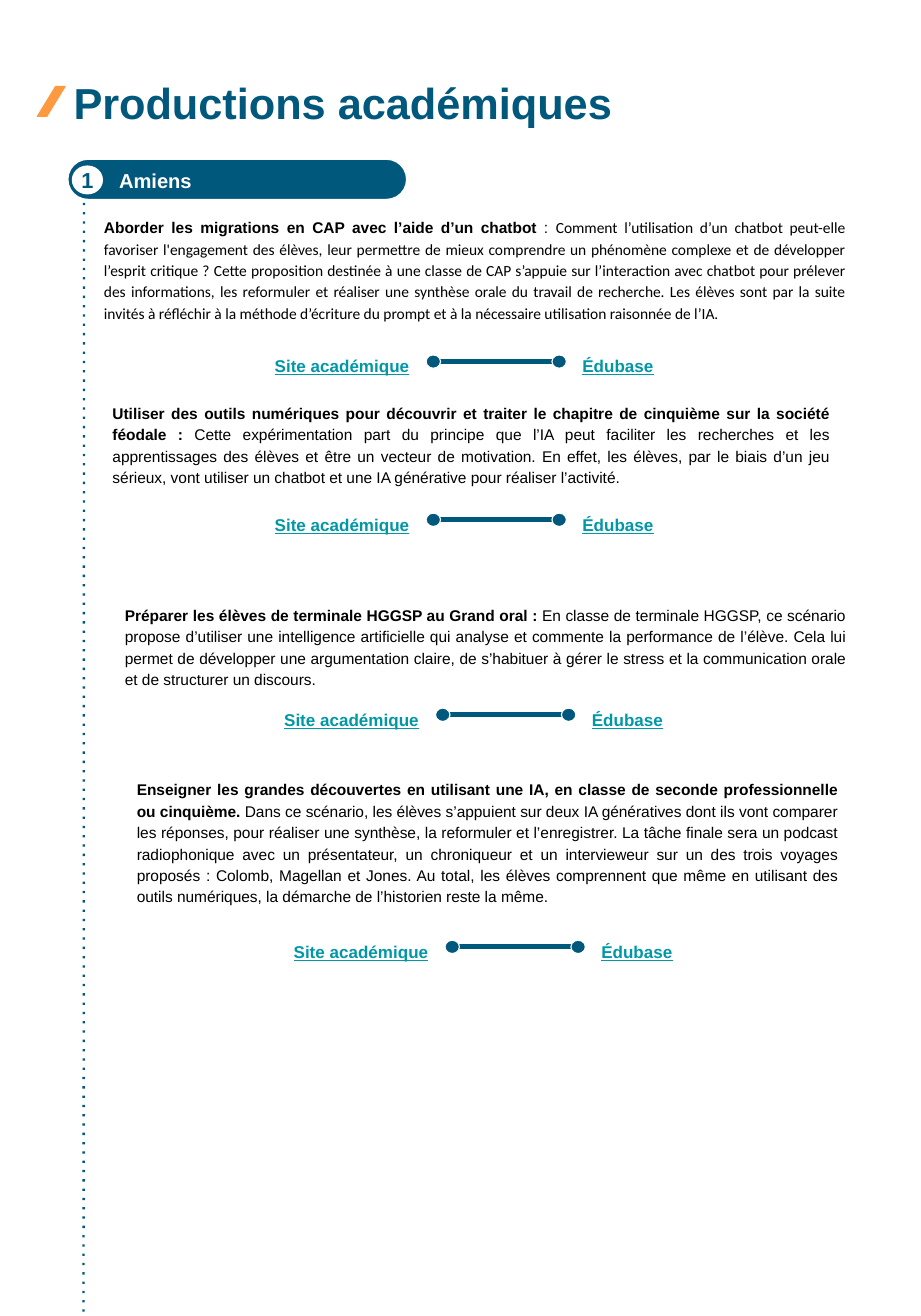
from lxml import etree
from pptx import Presentation
from pptx import util as u
from pptx.dml import color
from pptx.enum import shapes, text
from pptx.oxml import ns

TITLE = "Productions académiques"
ACADEMY = ("1", "Amiens")
LINK_LABELS = ("Site académique", "Édubase")

# Text boxes are (left, top, width, height) in grid cells; links are (left, top).
PROJECTS = [
    {
        "box": (8.35, 18.35, 68.5, 13.1), "links": (19.95, 30.95), "body_font": "Calibri",
        "heading": "Aborder les migrations en CAP avec l’aide d’un chatbot",
        "joint": " : ",
        "body": "Comment l’utilisation d’un chatbot peut-elle favoriser l'engagement des élèves, "
                "leur permettre de mieux comprendre un phénomène complexe et de développer l’esprit "
                "critique ? Cette proposition destinée à une classe de CAP s’appuie sur l’interaction "
                "avec chatbot pour prélever des informations, les reformuler et réaliser une synthèse "
                "orale du travail de recherche. Les élèves sont par la suite invités à réfléchir à la "
                "méthode d’écriture du prompt et à la nécessaire utilisation raisonnée de l’IA.",
    },
    {
        "box": (9.12, 35, 66.3, 9.5), "links": (19.95, 45.15), "body_font": "Arial",
        "heading": "Utiliser des outils numériques pour découvrir et traiter le chapitre de "
                   "cinquième sur la société féodale :",
        "joint": " ",
        "body": "Cette expérimentation part du principe que l’IA peut faciliter les recherches et les "
                "apprentissages des élèves et être un vecteur de motivation. En effet, les élèves, par "
                "le biais d’un jeu sérieux, vont utiliser un chatbot et une IA générative pour réaliser "
                "l’activité.",
    },
    {
        "box": (10.22, 53.15, 66.65, 6.7), "links": (20.8, 62.65), "body_font": "Arial",
        "heading": "Préparer les élèves de terminale HGGSP au Grand oral :",
        "joint": " ",
        "body": "En classe de terminale HGGSP, ce scénario propose d’utiliser une intelligence "
                "artificielle qui analyse et commente la performance de l’élève. Cela lui permet de "
                "développer une argumentation claire, de s’habituer à gérer le stress et la "
                "communication orale et de structurer un discours.",
    },
    {
        "box": (11.3, 68.8, 64.85, 8.8), "links": (21.65, 83.48), "body_font": "Arial",
        "heading": "Enseigner les grandes découvertes en utilisant une IA, en classe de seconde "
                   "professionnelle ou cinquième.",
        "joint": " ",
        "body": "Dans ce scénario, les élèves s’appuient sur deux IA génératives dont ils vont comparer "
                "les réponses, pour réaliser une synthèse, la reformuler et l’enregistrer. La tâche "
                "finale sera un podcast radiophonique avec un présentateur, un chroniqueur et un "
                "intervieweur sur un des trois voyages proposés : Colomb, Magellan et Jones. Au total, "
                "les élèves comprennent que même en utilisant des outils numériques, la démarche de "
                "l’historien reste la même.",
    },
]

THEME = {
    "navy": "00587D", "orange": "FF9940", "teal": "0097A7", "white": "FFFFFF", "black": "000000",
    "font": "Arial", "title": 28, "number": 14, "academy": 13, "link": 11, "body": 10,
}
CELL = 0.1
PAGE_WIDTH = u.Cm(21)
PAGE_HEIGHT = u.Cm(30)
INSET = 1
ALIGN = text.PP_ALIGN
ANCHOR = text.MSO_ANCHOR
KIND = shapes.MSO_SHAPE


def cells(*counts):
    return [u.Inches(count * CELL) for count in counts]


def rgb(name):
    return color.RGBColor.from_string(THEME[name])


def set_frame(shape, insets, anchor=ANCHOR.TOP):
    sides = ("margin_left", "margin_top", "margin_right", "margin_bottom")
    values = dict(zip(sides, cells(*insets)), word_wrap=True,
                  auto_size=text.MSO_AUTO_SIZE.NONE, vertical_anchor=anchor)
    for name, value in values.items():
        setattr(shape.text_frame, name, value)


def write(shape, content, size, ink, align=ALIGN.LEFT, **style):
    """Add a run to the first paragraph of the shape."""
    para = shape.text_frame.paragraphs[0]
    para.alignment = align
    span = para.add_run()
    span.text = content
    span.font.color.rgb = rgb(ink)
    values = {"name": THEME["font"], "size": u.Pt(THEME[size]), "bold": True} | style
    for name, value in values.items():
        setattr(span.font, name, value)
    return para


def add_box(page, at):
    box = page.shapes.add_textbox(*cells(*at))
    set_frame(box, [INSET] * 4)
    return box


def add_shape(page, kind, at, fill, line, adjust=None):
    shape = page.shapes.add_shape(kind, *cells(*at))
    shape.shadow.inherit = False
    shape.fill.solid()
    shape.fill.fore_color.rgb = rgb(fill)
    shape.line.color.rgb = rgb(line)
    shape.line.width = u.Pt(0.75)
    if adjust is not None:
        shape.adjustments[0] = adjust
    return shape


def add_line(page, start, end, width, dash=None):
    line = page.shapes.add_connector(shapes.MSO_CONNECTOR.STRAIGHT, *cells(*start, *end))
    line.line.color.rgb = rgb("navy")
    line.line.width = u.Pt(width)
    properties = line._element.spPr
    if dash:
        etree.SubElement(properties.find(ns.qn("a:ln")), ns.qn("a:prstDash"), val=dash)
    etree.SubElement(properties, ns.qn("a:effectLst"))


def add_heading(page):
    title = page.shapes.title
    title.left, title.top, title.width, title.height = cells(5.6, 5.8, 72.3, 6.7)
    set_frame(title, [INSET] * 4)
    write(title, TITLE, "title", "navy")
    add_shape(page, KIND.PARALLELOGRAM, (3.35, 7.75, 2.5, 2.7), "orange", "orange", 0.66)


def add_academy(page):
    number, name = ACADEMY
    bar = add_shape(page, KIND.ROUNDED_RECTANGLE, (6.1, 14.3, 30.4, 3.6), "navy", "white", 0.5)
    set_frame(bar, (4.08, 0.2, INSET, 0), ANCHOR.MIDDLE)
    write(bar, name, "academy", "white")
    badge = add_shape(page, KIND.OVAL, (6.5, 14.9, 2.7, 2.5), "white", "white")
    set_frame(badge, (0, 0, 0, 0), ANCHOR.MIDDLE)
    write(badge, number, "number", "navy", ALIGN.CENTER)


def add_project(page, project):
    box = add_box(page, project["box"])
    write(box, project["heading"], "body", "black")
    para = write(box, project["joint"], "body", "black", bold=False)
    write(box, project["body"], "body", "black", ALIGN.JUSTIFY,
          bold=False, name=project["body_font"])
    para.line_spacing = 1.15


def add_links(page, left, top):
    """Two underlined labels joined by a bar with a dot at each end."""
    site, edubase = LINK_LABELS
    add_line(page, (left + 18.5, top + 1.5), (left + 30.6, top + 1.5), 3)
    for offset in (18.3, 29.6):
        add_shape(page, KIND.OVAL, (left + offset, top + 0.9, 1.3, 1.2), "navy", "white")
    for label, offset, width, align in ((site, 0, 17.8, ALIGN.RIGHT),
                                        (edubase, 31.35, 14.7, ALIGN.LEFT)):
        box = add_box(page, (left + offset, top, width, 3.9))
        write(box, label, "link", "teal", align, underline=True)


def main():
    deck = Presentation()
    deck.slide_width = PAGE_WIDTH
    deck.slide_height = PAGE_HEIGHT
    page = deck.slides.add_slide(deck.slide_layouts[5])
    add_line(page, (7.55, 18.2), (7.5, PAGE_HEIGHT.inches / CELL), 1.5, "dot")
    add_heading(page)
    add_academy(page)
    for project in PROJECTS:
        add_project(page, project)
        add_links(page, *project["links"])
    deck.save("out.pptx")


if __name__ == "__main__":
    main()
